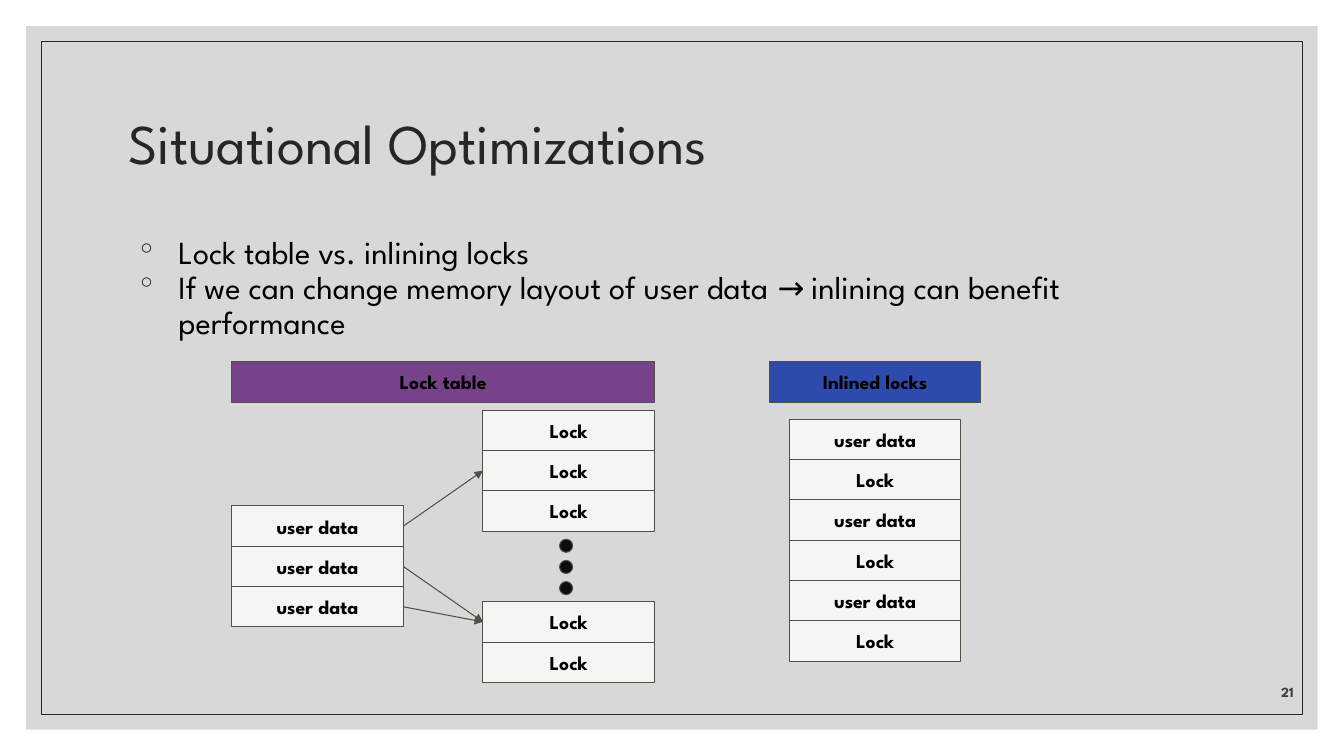
"""Build a slide that compares a lock table with inlined locks."""
from dataclasses import dataclass

from lxml.etree import SubElement
from pptx import Presentation
from pptx.dml.color import RGBColor
from pptx.enum.shapes import MSO_CONNECTOR as Connector, MSO_SHAPE as Preset
from pptx.enum.text import MSO_ANCHOR as Anchor, MSO_AUTO_SIZE as AutoSize, PP_ALIGN as Align
from pptx.oxml.ns import qn
from pptx.util import Inches, Pt


@dataclass(frozen=True)
class Theme:
    """Colours, type sizes and grid lengths of the slide."""
    font: str = "League Spartan"
    ink: str = "262626"
    text: str = "000000"
    number: str = "3F3F3F"
    panel: str = "BFBFBF"
    cell: str = "F5F6F4"
    outline: str = "505046"
    dot: str = "0C0C0C"
    table_header: str = "76428A"
    inline_header: str = "2D4BAD"
    title_size: int = 40
    body_size: int = 23
    label_size: int = 14
    number_size: int = 10
    line_width: float = 0.75
    width: float = 13.33
    height: float = 7.5
    row: float = 0.4
    column: float = 1.7


THEME = Theme()


def colour(code):
    """Turn a hex code into a colour."""
    return RGBColor.from_string(code)


def add_run(para, text, size, code, bold=False):
    """Add one formatted run to a paragraph."""
    span = para.add_run()
    span.text = text
    font = span.font
    font.name, font.size, font.bold = THEME.font, Pt(size), bold
    font.color.rgb = colour(code)


def add_box(page, preset, left, top, width, height, fill=None, line=THEME.outline):
    """Add a flat preset shape; no fill or line where the colour is None."""
    box = page.shapes.add_shape(preset, *map(Inches, (left, top, width, height)))
    box.shadow.inherit = False
    if fill:
        box.fill.solid()
        box.fill.fore_color.rgb = colour(fill)
    else:
        box.fill.background()
    if line:
        box.line.color.rgb = colour(line)
        box.line.width = Pt(THEME.line_width)
    else:
        box.line.fill.background()
    return box


def add_label(page, text, left, top, width, fill):
    """Add a rectangle one row high with a centred bold label."""
    box = add_box(page, Preset.RECTANGLE, left, top, width, THEME.row, fill)
    frame = box.text_frame
    frame.word_wrap = True
    frame.vertical_anchor = Anchor.MIDDLE
    frame.margin_top = frame.margin_bottom = Inches(0.1)
    para = frame.paragraphs[0]
    para.alignment = Align.CENTER
    add_run(para, text, THEME.label_size, THEME.text, bold=True)
    return box


def add_stack(page, left, top, labels):
    """Stack labelled cells downwards and return them."""
    return [add_label(page, text, left, top + index * THEME.row, THEME.column, THEME.cell)
            for index, text in enumerate(labels)]


def add_arrow(page, source, target):
    """Join the right side of one cell to the left side of another."""
    arrow = page.shapes.add_connector(Connector.STRAIGHT, 0, 0, 0, 0)
    arrow.begin_connect(source, 3)
    arrow.end_connect(target, 1)
    arrow.line.color.rgb = colour(THEME.outline)
    arrow.line.width = Pt(THEME.line_width)
    SubElement(arrow.line._get_or_add_ln(), qn("a:tailEnd"), type="triangle")
    SubElement(arrow._element.spPr, qn("a:effectLst"))


def add_backdrop(page):
    """Put the translucent panel and its thin frame on the layout."""
    def inset(margin, fill, line):
        return add_box(page, Preset.RECTANGLE, margin, margin,
                       THEME.width - 2 * margin, THEME.height - 2 * margin, fill, line)

    panel = inset(0.26, THEME.panel, None)
    tint = panel._element.spPr.find(f".//{qn('a:srgbClr')}")
    SubElement(tint, qn("a:alpha"), val="60000")
    frame = inset(0.41, None, THEME.ink)
    for index, box in enumerate((panel, frame), start=2):
        page.slide_layout.shapes._spTree.insert(index, box._element)


def place(box, left, top, width, height, anchor):
    """Place a text shape and set how its text sits."""
    box.left, box.top, box.width, box.height = map(Inches, (left, top, width, height))
    frame = box.text_frame
    frame.word_wrap = True
    frame.auto_size = AutoSize.NONE
    frame.vertical_anchor = anchor
    return frame


def add_title(page, text):
    """Fill the title placeholder."""
    para = place(page.shapes.title, 1.17, 0.7, 11, 1.5, Anchor.MIDDLE).paragraphs[0]
    para.alignment = Align.LEFT
    para.line_spacing = 0.9
    add_run(para, text, THEME.title_size, THEME.ink)


def add_bullets(page, items):
    """Fill the body placeholder with a bulleted list."""
    frame = place(page.placeholders[1], 1.17, 2.3, 11, 1.5, Anchor.TOP)
    for index, text in enumerate(items):
        para = frame.add_paragraph() if index else frame.paragraphs[0]
        para.line_spacing = 0.9
        para.space_before = Pt(0 if index else 9)
        props = para._p.get_or_add_pPr()
        props.set("marL", str(Inches(0.5)))
        props.set("indent", str(Inches(-0.41)))
        SubElement(SubElement(props, qn("a:buClr")), qn("a:srgbClr"), val=THEME.ink)
        SubElement(props, qn("a:buFont"), typeface=THEME.font)
        SubElement(props, qn("a:buChar"), char="◦")
        add_run(para, text, THEME.body_size, THEME.text)


def add_page_number(page, text):
    """Add the page number at the bottom right."""
    box = page.shapes.add_textbox(0, 0, 0, 0)
    para = place(box, 12.01, 6.6, 0.92, 0.4, Anchor.BOTTOM).paragraphs[0]
    para.alignment = Align.RIGHT
    add_run(para, text, THEME.number_size, THEME.number, bold=True)


def add_lock_table(page, left, top):
    """Draw user data that points into a separate table of locks."""
    width = 4.19
    lock_left = left + width - THEME.column
    upper = add_stack(page, lock_left, top + 0.48, ["Lock"] * 3)
    lower = add_stack(page, lock_left, top + 2.38, ["Lock"] * 2)
    for index in range(3):
        add_box(page, Preset.OVAL, lock_left + 0.76, top + 1.76 + index * 0.21,
                0.13, 0.13, THEME.dot)
    data = add_stack(page, left, top + 1.43, ["user data"] * 3)
    for source, target in zip(data, (upper[1], lower[0], lower[0])):
        add_arrow(page, source, target)
    add_label(page, "Lock table", left, top, width, THEME.table_header)


def add_inlined_locks(page, left, top):
    """Draw locks stored next to the user data they guard."""
    add_stack(page, left + 0.2, top + 0.57, ["user data", "Lock"] * 3)
    add_label(page, "Inlined locks", left, top, 2.1, THEME.inline_header)


def main():
    """Build and save the deck."""
    deck = Presentation()
    deck.slide_width, deck.slide_height = Inches(THEME.width), Inches(THEME.height)
    page = deck.slides.add_slide(deck.slide_layouts[1])
    add_backdrop(page)
    add_title(page, "Situational Optimizations")
    add_bullets(page, [
        "Lock table vs. inlining locks",
        "If we can change memory layout of user data → inlining can benefit performance",
    ])
    add_page_number(page, "21")
    add_lock_table(page, 2.3, 3.59)
    add_inlined_locks(page, 7.63, 3.59)
    deck.save("out.pptx")


if __name__ == "__main__":
    main()
